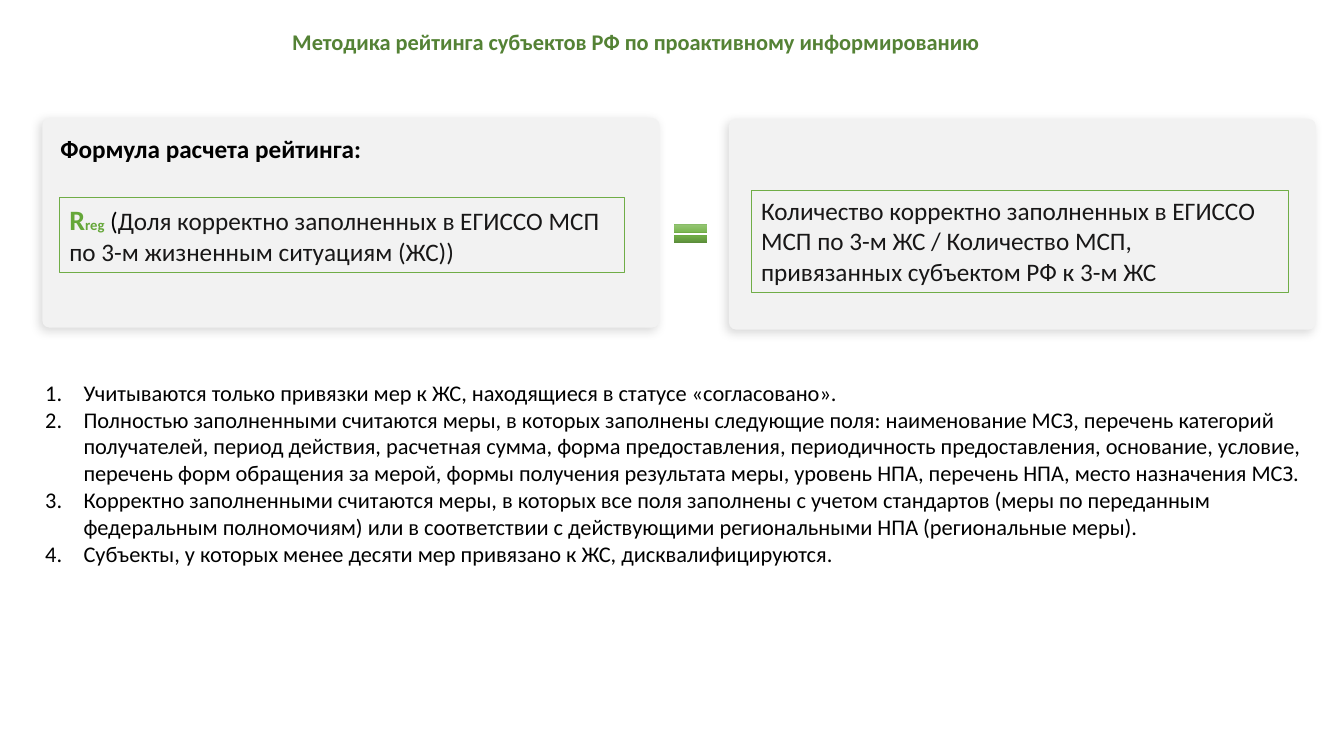
from lxml.etree import SubElement
from pptx import Presentation
from pptx.dml.color import RGBColor
from pptx.enum.shapes import MSO_SHAPE
from pptx.enum.text import MSO_ANCHOR, PP_ALIGN
from pptx.oxml import parse_xml
from pptx.oxml.ns import nsdecls, qn
from pptx.util import Inches, Pt

BLACK = RGBColor(0x00, 0x00, 0x00)
INK = RGBColor(0x18, 0x17, 0x17)
HEADING_GREEN = RGBColor(0x54, 0x82, 0x35)
SYMBOL_GREEN = RGBColor(0x65, 0xA7, 0x39)
BORDER_GREEN = RGBColor(0x70, 0xAD, 0x47)
CARD_GRAY = RGBColor(0xF2, 0xF2, 0xF2)
EQUALS_STOPS = [(0, RGBColor(0x4B, 0x74, 0x30)), (48, RGBColor(0x74, 0xB3, 0x49)),
                (100, RGBColor(0xA9, 0xD1, 0x8E))]

TITLE_FORMAT = {"size": Pt(16), "bold": True, "color": HEADING_GREEN}
CAPTION_FORMAT = {"size": Pt(18), "bold": True, "color": BLACK}
SYMBOL_FORMAT = {"size": Pt(20), "bold": True, "color": SYMBOL_GREEN}
INDEX_FORMAT = {"size": Pt(10.5), "bold": True, "color": SYMBOL_GREEN}
FORMULA_FORMAT = {"size": Pt(18), "bold": False, "color": INK}
NOTE_FORMAT = {"size": Pt(16), "bold": False, "color": BLACK}

# Boxes are left, top, width, height in inches
CARDS = [(7.23, 1.18, 5.82, 2.09), (0.42, 1.17, 6.12, 2.08)]
HEADINGS = [
    ((2.8, 0.19, 8.48, 0.48),
     "Методика рейтинга субъектов РФ по проактивному информированию", TITLE_FORMAT),
    ((0.5, 1.25, 3.5, 0.48), "Формула расчета рейтинга:", CAPTION_FORMAT),
]
FORMULA_SIDES = [
    ((0.59, 1.96, 5.6, 0.74), [
        ("R", SYMBOL_FORMAT),
        ("reg", INDEX_FORMAT),
        (" ", CAPTION_FORMAT),
        ("(", {**FORMULA_FORMAT, "color": BLACK}),
        ("Доля корректно заполненных в ЕГИССО МСП по 3-м жизненным ситуациям (ЖС))",
         FORMULA_FORMAT),
    ]),
    ((7.45, 1.89, 5.33, 1.01), [
        ("Количество корректно заполненных в ЕГИССО МСП по 3-м ЖС / Количество МСП, "
         "привязанных субъектом РФ к 3-м ЖС", FORMULA_FORMAT),
    ]),
]
EQUALS_BOX = (6.63, 2.17, 0.44, 0.3)
NOTES_BOX = (0.35, 3.71, 12.69, 2.26)
NOTES = [
    "Учитываются только привязки мер к ЖС, находящиеся в статусе «согласовано».",
    "Полностью заполненными считаются меры, в которых заполнены следующие поля: "
    "наименование МСЗ, перечень категорий получателей, период действия, расчетная сумма, "
    "форма предоставления, периодичность предоставления, основание, условие, перечень форм "
    "обращения за мерой, формы получения результата меры, уровень НПА, перечень НПА, "
    "место назначения МСЗ.",
    "Корректно заполненными считаются меры, в которых все поля заполнены с учетом стандартов "
    "(меры по переданным федеральным полномочиям) или в соответствии с действующими "
    "региональными НПА (региональные меры).",
    "Субъекты, у которых менее десяти мер привязано к ЖС, дисквалифицируются.",
]
NOTE_INDENT = Inches(0.38)


def add_plain_shape(slide, preset, box):
    """Add a preset shape with no fill, line or shadow."""
    shape = slide.shapes.add_shape(preset, *map(Inches, box))
    shape.fill.background()
    shape.line.fill.background()
    shape.shadow.inherit = False
    return shape


def add_run(paragraph, text, text_format):
    run = paragraph.add_run()
    run.text = text
    run.font.name = "Calibri"
    for name, value in text_format.items():
        if name == "color":
            run.font.color.rgb = value
        else:
            setattr(run.font, name, value)


def add_card(slide, box):
    card = add_plain_shape(slide, MSO_SHAPE.ROUNDED_RECTANGLE, box)
    card.adjustments[0] = 0.034
    card.fill.solid()
    card.fill.fore_color.rgb = CARD_GRAY
    effects = card._element.spPr.find(qn("a:effectLst"))
    effects.append(parse_xml(
        f'<a:outerShdw {nsdecls("a")} blurRad="{Pt(7)}" dist="{Pt(3)}" dir="{135 * 60000}" '
        f'algn="tr" rotWithShape="0"><a:srgbClr val="{BLACK}"><a:alpha val="15000"/>'
        '</a:srgbClr></a:outerShdw>'))


def add_text_frame(slide, box):
    frame = slide.shapes.add_textbox(*map(Inches, box)).text_frame
    frame.word_wrap = True
    return frame


def add_heading(slide, box, text, text_format):
    frame = add_text_frame(slide, box)
    frame.vertical_anchor = MSO_ANCHOR.MIDDLE
    frame.paragraphs[0].line_spacing = 0.9
    add_run(frame.paragraphs[0], text, text_format)


def add_formula_side(slide, box, runs):
    side = add_plain_shape(slide, MSO_SHAPE.RECTANGLE, box)
    side.line.color.rgb = BORDER_GREEN
    side.line.width = Pt(0.75)
    side.text_frame.vertical_anchor = MSO_ANCHOR.TOP
    paragraph = side.text_frame.paragraphs[0]
    paragraph.alignment = PP_ALIGN.LEFT
    for text, text_format in runs:
        add_run(paragraph, text, text_format)


def add_equals_sign(slide):
    equals = add_plain_shape(slide, MSO_SHAPE.MATH_EQUAL, EQUALS_BOX)
    equals.fill.gradient()
    equals.fill.gradient_angle = 90
    stops = equals._element.spPr.find(qn("a:gradFill")).find(qn("a:gsLst"))
    stops.clear()
    for percent, color in EQUALS_STOPS:
        stop = SubElement(stops, qn("a:gs"), pos=str(percent * 1000))
        SubElement(stop, qn("a:srgbClr"), val=str(color))


def add_notes_list(slide):
    frame = add_text_frame(slide, NOTES_BOX)
    for index, note in enumerate(NOTES):
        paragraph = frame.add_paragraph() if index else frame.paragraphs[0]
        add_run(paragraph, note, NOTE_FORMAT)
        properties = paragraph._p.get_or_add_pPr()
        properties.set("marL", str(NOTE_INDENT))
        properties.set("indent", str(-NOTE_INDENT))
        SubElement(properties, qn("a:buFont"), typeface="+mj-lt")
        SubElement(properties, qn("a:buAutoNum"), type="arabicPeriod")


def main():
    presentation = Presentation()
    presentation.slide_width = Inches(13.33)
    presentation.slide_height = Inches(7.5)
    slide = presentation.slides.add_slide(presentation.slide_layouts[6])
    for box in CARDS:
        add_card(slide, box)
    for heading in HEADINGS:
        add_heading(slide, *heading)
    for side in FORMULA_SIDES:
        add_formula_side(slide, *side)
    add_equals_sign(slide)
    add_notes_list(slide)
    presentation.save("out.pptx")


if __name__ == "__main__":
    main()
